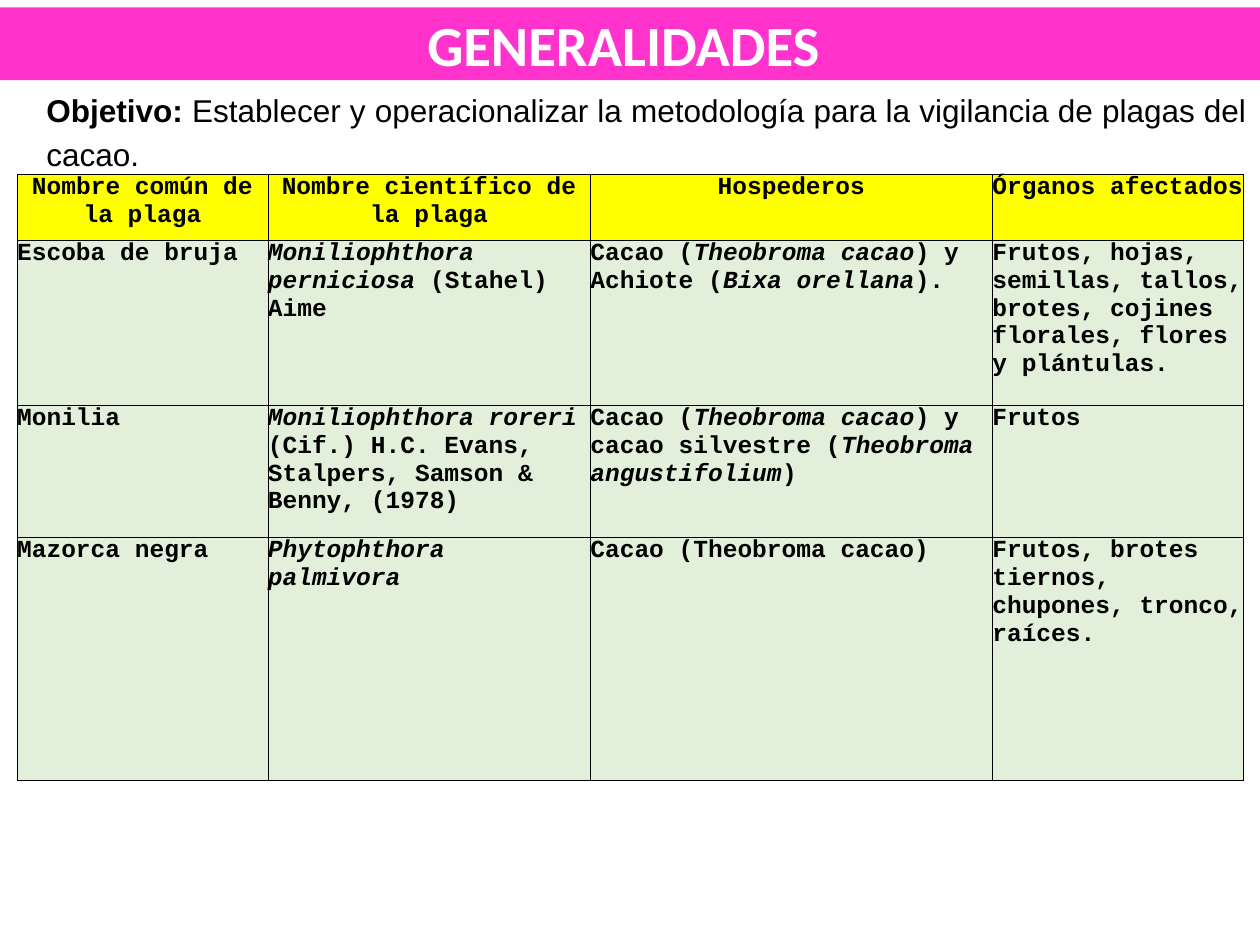
import pptx
import pptx.util
import pptx.dml.color
import pptx.enum.shapes
import pptx.enum.text
import pptx.oxml
import pptx.oxml.ns

Pt = pptx.util.Pt
ALIGN = pptx.enum.text.PP_ALIGN


def color(fill, code):
    fill.solid()
    fill.fore_color.rgb = pptx.dml.color.RGBColor.from_string(code)


def write(frame, text, form, tint, align, mark="italic", space=1):
    """Fill a frame: one paragraph a line, with *starred* parts set in the mark style."""
    for row, line in enumerate(text.split("\n")):
        para = frame.paragraphs[0] if row == 0 else frame.add_paragraph()
        para.alignment, para.line_spacing = align, space
        for part, words in enumerate(line.split("*")):
            if words:
                run = para.add_run()
                run.text = words
                for key, val in {**form, mark: part % 2 == 1 or form.get(mark, False)}.items():
                    setattr(run.font, key, val)
                color(run.font.fill, tint)


deck = pptx.Presentation()
deck.slide_width, deck.slide_height = Pt(720), Pt(540)
slide = deck.slides.add_slide(deck.slide_layouts[6])

# Title band
band = slide.shapes.add_shape(
    pptx.enum.shapes.MSO_SHAPE.RECTANGLE, Pt(0), Pt(4.3), Pt(720), Pt(41.5))
band.shadow.inherit = False
color(band.fill, "FF33CC")
band.line.fill.background()
band.text_frame.vertical_anchor = pptx.enum.text.MSO_ANCHOR.MIDDLE
write(band.text_frame, "GENERALIDADES ",
      {"name": "Calibri", "size": Pt(32.4), "bold": True}, "FFFFFF", ALIGN.CENTER)

# Objective
goal = slide.shapes.add_textbox(Pt(19.5), Pt(45.5), Pt(700), Pt(57.5))
goal.text_frame.word_wrap = True
write(goal.text_frame,
      "*Objetivo: *Establecer y operacionalizar la metodología para la vigilancia "
      "de plagas del cacao.",
      {"name": "Arial", "size": Pt(18)}, "000000", ALIGN.JUSTIFY, "bold", 1.15)

# Pest table
pests = [
    ["Nombre común de la plaga", "Nombre científico de la plaga",
     "Hospederos", "Órganos afectados"],
    ["Escoba de bruja", "*Moniliophthora perniciosa* (Stahel) Aime",
     "Cacao (*Theobroma cacao*) y Achiote (*Bixa orellana*).",
     "Frutos, hojas, semillas, tallos, brotes, cojines florales, flores y plántulas."],
    ["Monilia",
     "*Moniliophthora roreri*\n(Cif.) H.C. Evans, Stalpers, Samson & Benny, (1978)",
     "Cacao (*Theobroma cacao*) y cacao silvestre (*Theobroma angustifolium*)", "Frutos"],
    ["Mazorca negra", "*Phytophthora*\n*palmivora*", "Cacao (Theobroma cacao)",
     "Frutos, brotes tiernos, chupones, tronco, raíces."],
]
wides = [143.3, 184.3, 229.7, 143.3]
highs = [37.7, 94.3, 75.5, 138.9]
table = slide.shapes.add_table(
    len(highs), len(wides), Pt(9.8), Pt(99.7), Pt(sum(wides)), Pt(sum(highs))).table
for col, wide in zip(table.columns, wides):
    col.width = Pt(wide)
for row, high in zip(table.rows, highs):
    row.height = Pt(high)

font = {"name": "Courier New", "size": Pt(14), "bold": True}
sides = ["margin_left", "margin_top", "margin_right", "margin_bottom"]
for r, line in enumerate(pests):
    for c, text in enumerate(line):
        cell = table.cell(r, c)
        for side in sides:
            setattr(cell, side, Pt(0))
        props = cell._tc.get_or_add_tcPr()
        for edge in "LRTB":
            props.append(pptx.oxml.parse_xml(
                f'<a:ln{edge} {pptx.oxml.ns.nsdecls("a")} w="{Pt(0.5)}"><a:solidFill>'
                f'<a:srgbClr val="000000"/></a:solidFill></a:ln{edge}>'))
        color(cell.fill, "E2EFDA" if r else "FFFF00")
        write(cell.text_frame, text, font, "000000", ALIGN.LEFT if r else ALIGN.CENTER)

deck.save("out.pptx")
